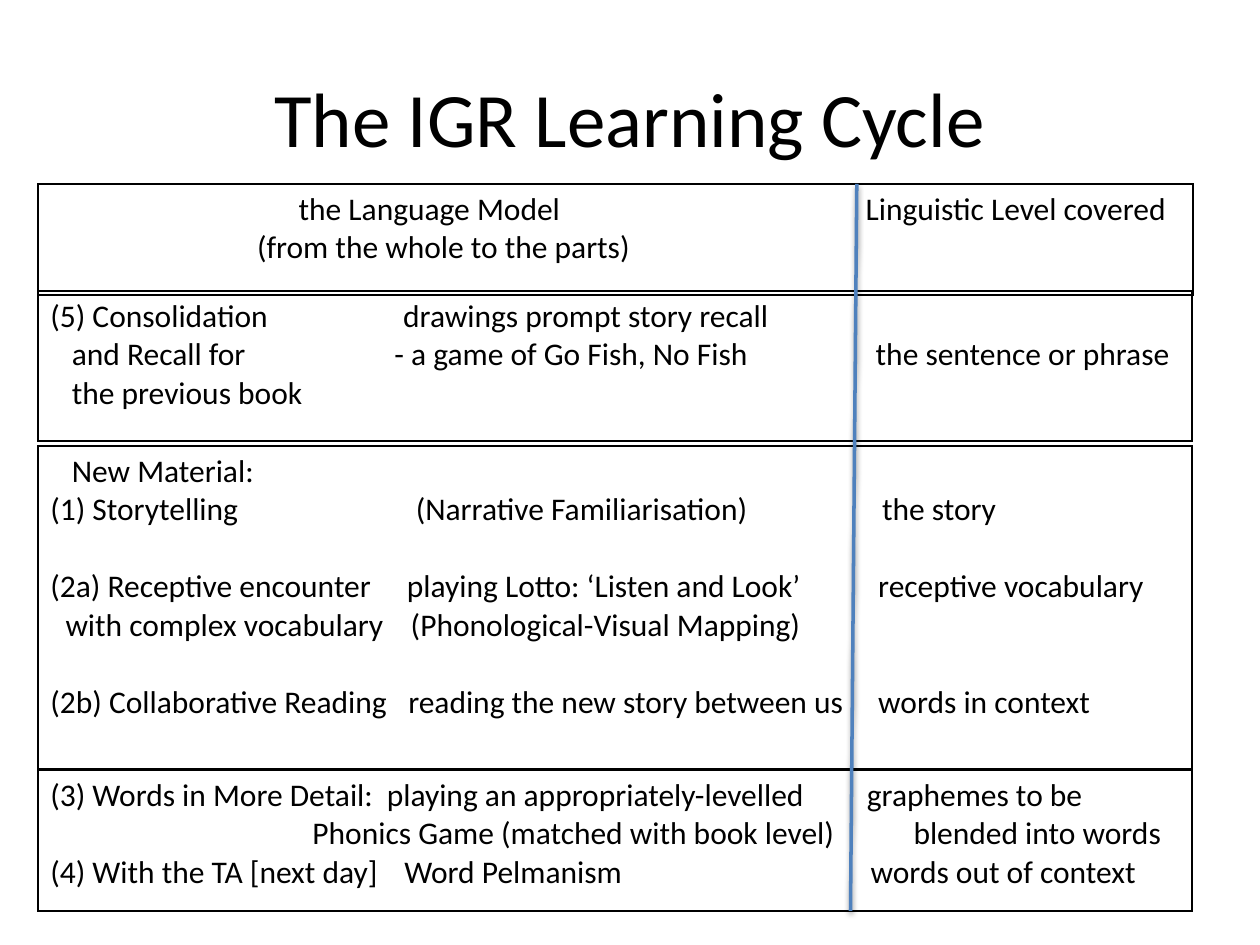
"""Build the IGR Learning Cycle slide."""
import pptx
import pptx.dml.color
import pptx.enum.shapes
import pptx.enum.text
import pptx.oxml
import pptx.oxml.ns
import pptx.util

Inches = pptx.util.Inches
Pt = pptx.util.Pt
HUES = {"ink": "000000", "rule": "4F81BD"}
NS = pptx.oxml.ns.nsdecls("a")
BODY = {"name": "Calibri", "size": Pt(18)}
HEAD = {"name": "Calibri", "size": Pt(44)}


def style(font, form):
    for key, val in form.items():
        setattr(font, key, val)
    font.color.rgb = pptx.dml.color.RGBColor.from_string(HUES["ink"])


def write(para, parts):
    stops = [pos for pos, text in parts if pos]
    if stops:
        tabs = "".join(f'<a:tab pos="{Inches(pos)}" algn="l"/>' for pos in stops)
        props = para._p.get_or_add_pPr()
        props.append(pptx.oxml.parse_xml(f"<a:tabLst {NS}>{tabs}</a:tabLst>"))
    run = para.add_run()
    run.text = "".join("\t" * (pos > 0) + text for pos, text in parts)
    style(run.font, BODY)


deck = pptx.Presentation()
deck.slide_width, deck.slide_height = Inches(10), Inches(7.5)
slide = deck.slides.add_slide(deck.slide_layouts[6])

box = slide.shapes.add_textbox(Inches(0.5), Inches(0.3), Inches(9), Inches(1.25))
frame = box.text_frame
frame.word_wrap = True
frame.vertical_anchor = pptx.enum.text.MSO_ANCHOR.MIDDLE
title = frame.paragraphs[0]
title.alignment = pptx.enum.text.PP_ALIGN.CENTER
run = title.add_run()
run.text = "The IGR Learning Cycle"
style(run.font, HEAD)

# Each line: space before in points, then (tab position, text) parts.
BANDS = [
    (1.46, 9.17, 0.88, [
        (0, [(1.97, "the Language Model"), (6.47, "Linguistic Level covered")]),
        (0, [(1.64, "(from the whole to the parts)")]),
    ]),
    (2.31, 9.16, 1.19, [
        (0, [(0, "(5) Consolidation"), (2.8, "drawings prompt story recall")]),
        (0, [(0.17, "and Recall for"), (2.73, "- a game of Go Fish, No Fish"),
             (6.55, "the sentence or phrase")]),
        (0, [(0.17, "the previous book")]),
    ]),
    (3.54, 9.16, 2.56, [
        (0, [(0.17, "New Material:")]),
        (0, [(0, "(1) Storytelling"), (2.9, "(Narrative Familiarisation)"),
             (6.6, "the story")]),
        (22, [(0, "(2a) Receptive encounter"),
              (2.83, "playing Lotto: ‘Listen and Look’"),
              (6.57, "receptive vocabulary")]),
        (0, [(0.12, "with complex vocabulary"),
             (2.86, "(Phonological-Visual Mapping)")]),
        (22, [(0, "(2b) Collaborative Reading"),
              (2.84, "reading the new story between us"),
              (6.57, "words in context")]),
    ]),
    (6.11, 9.16, 1.12, [
        (0, [(0, "(3) Words in More Detail:"),
             (2.67, "playing an appropriately-levelled"),
             (6.48, "graphemes to be")]),
        (0, [(2.08, "Phonics Game (matched with book level)"),
             (6.85, "blended into words")]),
        (0, [(0, "(4) With the TA [next day]"), (2.81, "Word Pelmanism"),
             (6.51, "words out of context")]),
    ]),
]

for top, wide, high, lines in BANDS:
    table = slide.shapes.add_table(
        1, 1, Inches(0.3), Inches(top), Inches(wide), Inches(high)).table
    table.first_row = table.horz_banding = False
    cell = table.cell(0, 0)
    cell.fill.background()
    props = cell._tc.get_or_add_tcPr()
    for spot, side in enumerate(("lnL", "lnR", "lnT", "lnB")):
        props.insert(spot, pptx.oxml.parse_xml(
            f'<a:{side} {NS} w="{Pt(1)}"><a:solidFill>'
            f'<a:srgbClr val="{HUES["ink"]}"/></a:solidFill></a:{side}>'))
    for spot, (gap, parts) in enumerate(lines):
        para = cell.text_frame.add_paragraph() if spot else cell.text_frame.paragraphs[0]
        if gap:
            para.space_before = Pt(gap)
        write(para, parts)

line = slide.shapes.add_connector(
    pptx.enum.shapes.MSO_CONNECTOR.STRAIGHT,
    Inches(6.8), Inches(1.46), Inches(6.75), Inches(7.23))
line.line.width = Pt(2)
line.line.color.rgb = pptx.dml.color.RGBColor.from_string(HUES["rule"])
line._element.spPr.append(pptx.oxml.parse_xml(
    f'<a:effectLst {NS}><a:outerShdw blurRad="{Pt(3.1)}" dist="{Pt(1.6)}" '
    f'dir="5400000" rotWithShape="0"><a:srgbClr val="{HUES["ink"]}">'
    '<a:alpha val="38000"/></a:srgbClr></a:outerShdw></a:effectLst>'))

deck.save("out.pptx")
